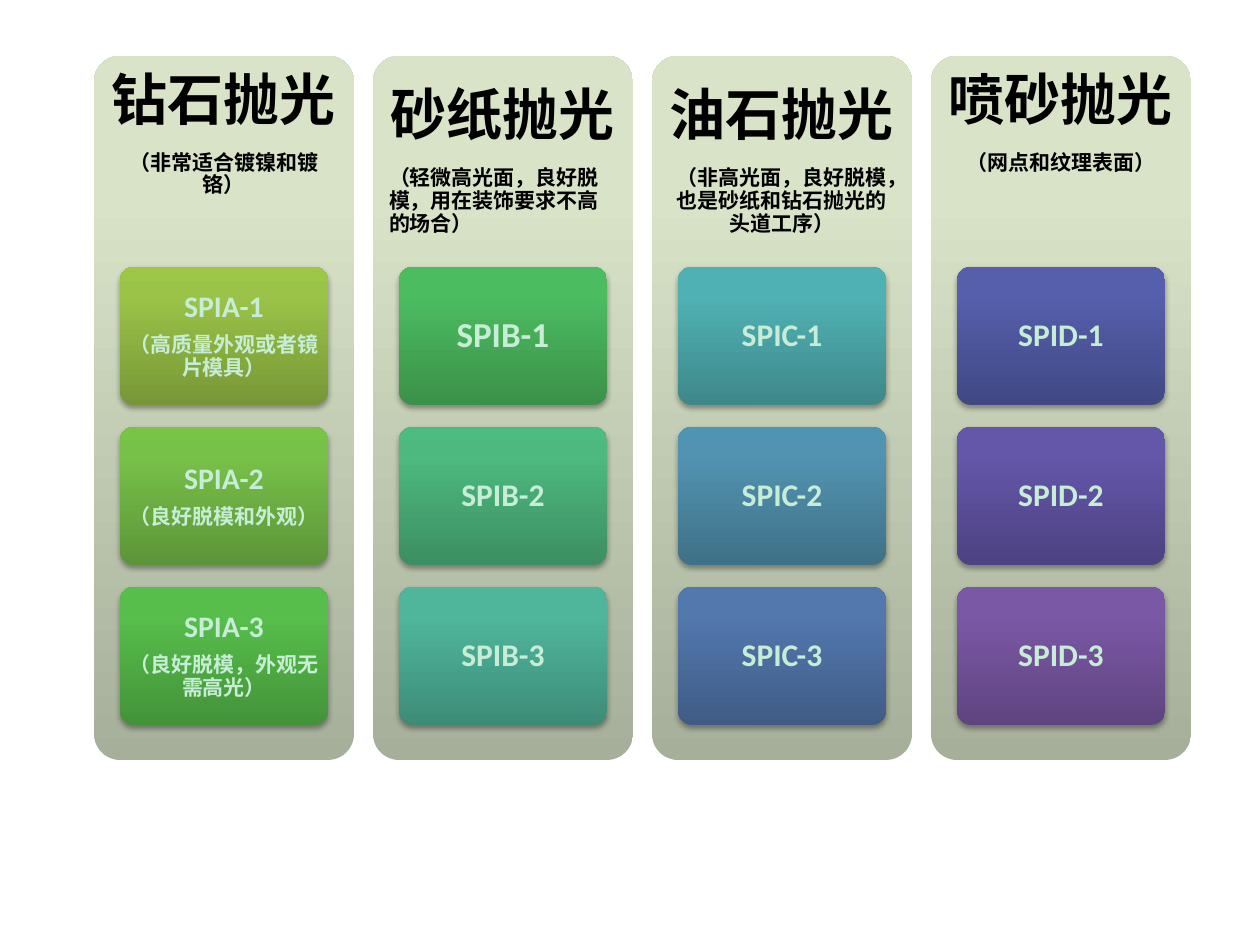
from lxml import etree
from pptx import Presentation
from pptx import util as u
from pptx.dml.color import RGBColor
from pptx.enum import shapes, text
from pptx.oxml.ns import qn

# Content: columns with their cards; a card is (name, note, size, gradient from bottom to top)
CENTER, LEFT = text.PP_ALIGN.CENTER, text.PP_ALIGN.LEFT
TOP, MIDDLE = text.MSO_ANCHOR.TOP, text.MSO_ANCHOR.MIDDLE
COLUMNS = [
    ("钻石抛光", "（非常适合镀镍和镀铬）", TOP, CENTER, [
        ("SPIA-1", "（高质量外观或者镜片模具）", 17, ("779737", "9BC348", "9DC746")),
        ("SPIA-2", "（良好脱模和外观）", 17, ("5C9538", "78C149", "78C447")),
        ("SPIA-3", "（良好脱模，外观无需高光）", 17, ("439339", "57BE4B", "55C149"))]),
    ("砂纸抛光", "（轻微高光面，良好脱模，用在装饰要求不高的场合）", MIDDLE, LEFT, [
        ("SPIB-1", None, 20, ("3B914A", "4CBC60", "4ABF5F")),
        ("SPIB-2", None, 18, ("3C8F62", "4DB97F", "4CBC80")),
        ("SPIB-3", None, 18, ("3D8C78", "4FB69C", "4DB99E"))]),
    ("油石抛光", "（非高光面，良好脱模，也是砂纸和钻石抛光的头道工序）", MIDDLE, CENTER, [
        ("SPIC-1", None, 18, ("3E888A", "50B1B4", "4FB3B6")),
        ("SPIC-2", None, 18, ("3F7188", "5293B1", "5094B4")),
        ("SPIC-3", None, 18, ("405C86", "5378AE", "5278B1"))]),
    ("喷砂抛光", "（网点和纹理表面）", TOP, CENTER, [
        ("SPID-1", None, 18, ("414984", "555FAC", "535EAE")),
        ("SPID-2", None, 18, ("4D4282", "6456A9", "6455AB")),
        ("SPID-3", None, 18, ("5F4480", "7B58A6", "7C57A8"))]),
]
COLORS = {"heading": "000000", "card_text": "C7EDD6", "shadow": "000000"}
PANEL_GRADIENT = ("A6AF9A", "D8E3C8", "D9E4C8")
STOPS = (0, 80, 100)

# Layout in px
SCALE = 914400 / 126
PANEL_X, PANEL_Y, PANEL_W, PANEL_H, PANEL_STEP = 94, 56, 260, 704, 279
HEADER_H, HEADER_PAD = 211, 16
CARD_DX, CARD_Y, CARD_W, CARD_H, CARD_STEP = 26, 267, 208, 138, 160
CARD_PAD = 2


def px(n):
    return u.Emu(round(n * SCALE))


def add(parent, tag, **attrs):
    return etree.SubElement(parent, qn(tag), {k: str(v) for k, v in attrs.items()})


def add_box(s, x, y, w, h, gradient, shadow=False):
    sp = s.shapes.add_shape(shapes.MSO_SHAPE.ROUNDED_RECTANGLE, px(x), px(y), px(w), px(h))
    sp.adjustments[0] = 0.1
    sp.shadow.inherit = False
    sp.line.fill.background()
    # Three-stop gradient, placed right after the geometry
    grad = etree.Element(qn("a:gradFill"), rotWithShape="1")
    stops = add(grad, "a:gsLst")
    for pos, color in zip(STOPS, gradient):
        add(add(stops, "a:gs", pos=pos * 1000), "a:srgbClr", val=color)
    add(grad, "a:lin", ang=270 * 60000, scaled=0)
    props = sp.fill._xPr
    props.find(qn("a:prstGeom")).addnext(grad)
    if shadow:
        outer = add(props.find(qn("a:effectLst")), "a:outerShdw", blurRad=u.Pt(3.1),
                    dist=u.Pt(1.8), dir=90 * 60000, rotWithShape=0)
        add(add(outer, "a:srgbClr", val=COLORS["shadow"]), "a:alpha", val=35000)
    return sp


def write(sp, lines, color, pad_x, pad_y, anchor):
    tf = sp.text_frame
    tf.word_wrap = True
    tf.vertical_anchor = anchor
    tf.margin_left = tf.margin_right = px(pad_x)
    tf.margin_top = tf.margin_bottom = px(pad_y)
    tf.text = "\n".join(line for line, size, align in lines)
    for p, (line, size, align) in zip(tf.paragraphs, lines):
        p.alignment = align
        p.line_spacing = 0.9
        # Space after as a share of the text size
        after = etree.Element(qn("a:spcAft"))
        add(after, "a:spcPct", val=35000)
        p._p.pPr.find(qn("a:lnSpc")).addnext(after)
        font = p.runs[0].font
        font.name, font.size, font.bold = "Calibri", u.Pt(size), True
        font.color.rgb = RGBColor.from_string(COLORS[color])


def main():
    prs = Presentation()
    prs.slide_width, prs.slide_height = u.Inches(10), u.Inches(7.5)
    s = prs.slides.add_slide(prs.slide_layouts[6])

    for col, (title, note, anchor, align, cards) in enumerate(COLUMNS):
        # Panel and its heading
        x = PANEL_X + col * PANEL_STEP
        add_box(s, x, PANEL_Y, PANEL_W, PANEL_H, PANEL_GRADIENT)
        header = s.shapes.add_textbox(px(x), px(PANEL_Y), px(PANEL_W), px(HEADER_H))
        write(header, [(title, 32, CENTER), (note, 12, align)], "heading",
              HEADER_PAD, HEADER_PAD, anchor)
        # Cards
        for row, (name, detail, size, gradient) in enumerate(cards):
            card = add_box(s, x + CARD_DX, CARD_Y + row * CARD_STEP, CARD_W, CARD_H,
                           gradient, shadow=True)
            lines = [(name, size, CENTER)] + ([(detail, 12, CENTER)] if detail else [])
            write(card, lines, "card_text", CARD_PAD, CARD_PAD, MIDDLE)

    prs.save("out.pptx")


if __name__ == "__main__":
    main()
